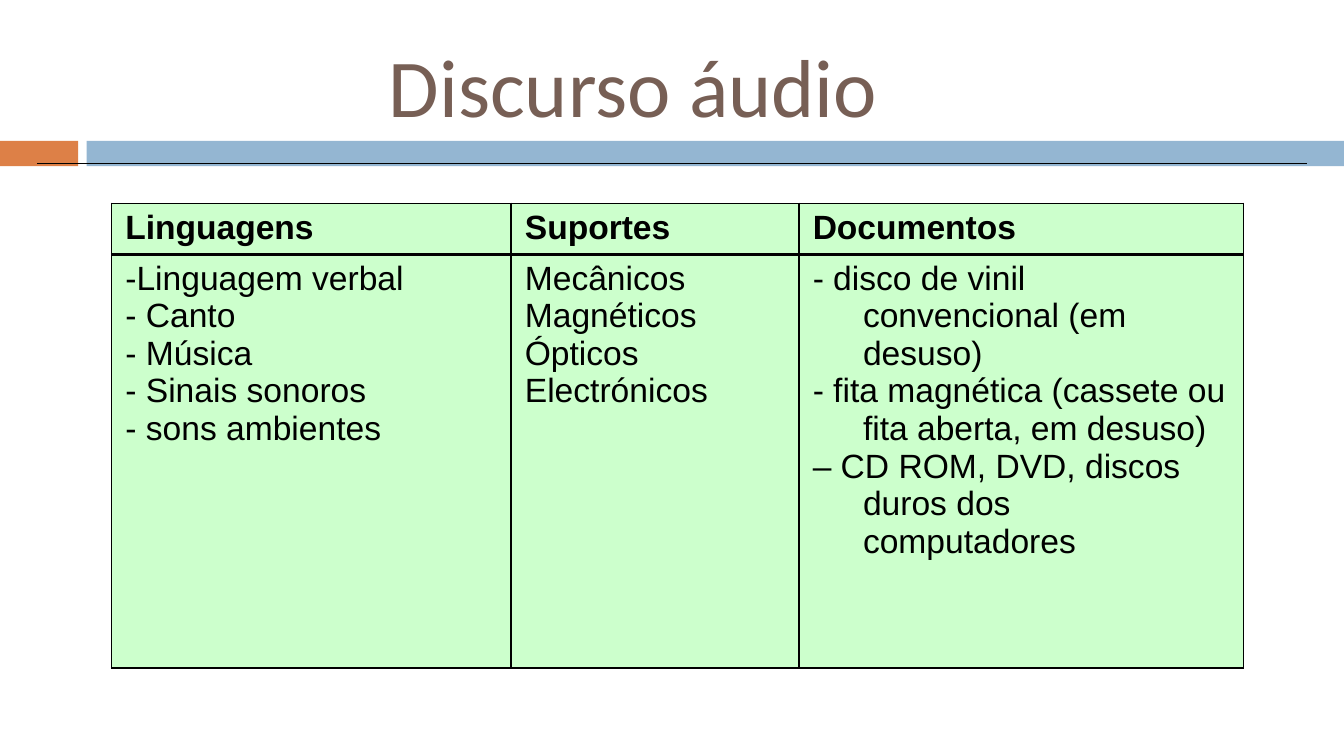
from dataclasses import dataclass

from lxml.etree import SubElement
from pptx import Presentation
from pptx.dml.color import RGBColor
from pptx.enum.shapes import MSO_CONNECTOR, MSO_SHAPE
from pptx.enum.text import MSO_ANCHOR, PP_ALIGN
from pptx.oxml.ns import qn
from pptx.util import Cm, Pt

COLORS = {
    "orange": "DD8047",
    "blue": "94B6D2",
    "brown": "775F55",
    "green": "CCFFCC",
    "black": "000000",
}
LEFT, JUSTIFY = PP_ALIGN.LEFT, PP_ALIGN.JUSTIFY


@dataclass
class Band:
    left: float
    width: float
    color: str


@dataclass
class Column:
    heading: str
    items: list[str]
    width: float
    heading_align: PP_ALIGN
    items_align: PP_ALIGN


BANDS = [Band(0, 1.48, "orange"), Band(1.64, 23.76, "blue")]
COLUMNS = [
    Column("Linguagens",
           ["-Linguagem verbal", "- Canto", "- Música", "- Sinais sonoros", "- sons ambientes"],
           7.55, LEFT, JUSTIFY),
    Column("Suportes",
           ["Mecânicos", "Magnéticos", "Ópticos", "Electrónicos"],
           5.44, JUSTIFY, JUSTIFY),
    Column("Documentos",
           ["- disco de vinil convencional (em desuso)",
            "- fita magnética (cassete ou fita aberta, em desuso)",
            "– CD ROM, DVD, discos duros dos computadores"],
           8.4, LEFT, LEFT),
]
ROW_HEIGHTS = [0.94, 7.81]


def rgb(name: str) -> RGBColor:
    return RGBColor.from_string(COLORS[name])


def draw_band(slide, band: Band) -> None:
    bar = slide.shapes.add_shape(
        MSO_SHAPE.RECTANGLE, Cm(band.left), Cm(2.66), Cm(band.width), Cm(0.48))
    bar.shadow.inherit = False
    bar.fill.solid()
    bar.fill.fore_color.rgb = rgb(band.color)
    bar.line.fill.background()


def set_borders(cell, widths: dict[str, float]) -> None:
    # Border elements must come before the fill in the cell properties
    properties = cell._tc.get_or_add_tcPr()
    for position, (side, width) in enumerate(widths.items()):
        border = SubElement(properties, qn(f"a:{side}"), w=str(Pt(width)))
        fill = SubElement(border, qn("a:solidFill"))
        SubElement(fill, qn("a:srgbClr"), val=COLORS["black"])
        properties.insert(position, border)


def fill_cell(cell, lines: list[str], align: PP_ALIGN, header: bool) -> None:
    cell.margin_left = cell.margin_right = Cm(0.26)
    cell.margin_top = cell.margin_bottom = Cm(0.1)
    cell.fill.solid()
    cell.fill.fore_color.rgb = rgb("green")
    set_borders(cell, {"lnL": 1, "lnR": 1,
                       "lnT": 1 if header else 2, "lnB": 2 if header else 1})
    cell.text_frame.text = "\n".join(lines)
    for paragraph in cell.text_frame.paragraphs:
        paragraph.alignment = align
        paragraph.font.name = "Arial"
        paragraph.font.size = Pt(18)
        paragraph.font.bold = header
        paragraph.font.color.rgb = rgb("black")
        # Hanging indent
        indents = paragraph._p.get_or_add_pPr()
        indents.set("marL", str(Cm(0.95)))
        indents.set("indent", str(-Cm(0.95)))


def draw_table(slide, columns: list[Column]) -> None:
    total_width = sum(column.width for column in columns)
    table = slide.shapes.add_table(
        len(ROW_HEIGHTS), len(columns), Cm(2.11), Cm(3.84),
        Cm(total_width), Cm(sum(ROW_HEIGHTS))).table
    for row, height in zip(table.rows, ROW_HEIGHTS):
        row.height = Cm(height)
    for index, column in enumerate(columns):
        table.columns[index].width = Cm(column.width)
        fill_cell(table.cell(0, index), [column.heading], column.heading_align, True)
        fill_cell(table.cell(1, index), column.items, column.items_align, False)


presentation = Presentation()
presentation.slide_width = Cm(25.4)
presentation.slide_height = Cm(14.28)
slide = presentation.slides.add_slide(presentation.slide_layouts[6])

# Coloured bands under the title
for band in BANDS:
    draw_band(slide, band)

# Title
title = slide.shapes.add_textbox(Cm(7.1), Cm(0.25), Cm(15.11), Cm(2.69)).text_frame
title.word_wrap = True
title.vertical_anchor = MSO_ANCHOR.MIDDLE
title.text = "Discurso áudio"
title_font = title.paragraphs[0].font
title_font.name = "Calibri"
title_font.size = Pt(44)
title_font.color.rgb = rgb("brown")

# Table of languages, media and documents
draw_table(slide, COLUMNS)

# Thin rule across the bands
rule = slide.shapes.add_connector(
    MSO_CONNECTOR.STRAIGHT, Cm(0.7), Cm(3.09), Cm(24.7), Cm(3.09))
rule.line.color.rgb = rgb("black")
rule.line.width = Pt(0.75)
SubElement(rule._element.spPr, qn("a:effectLst"))

presentation.save("out.pptx")
